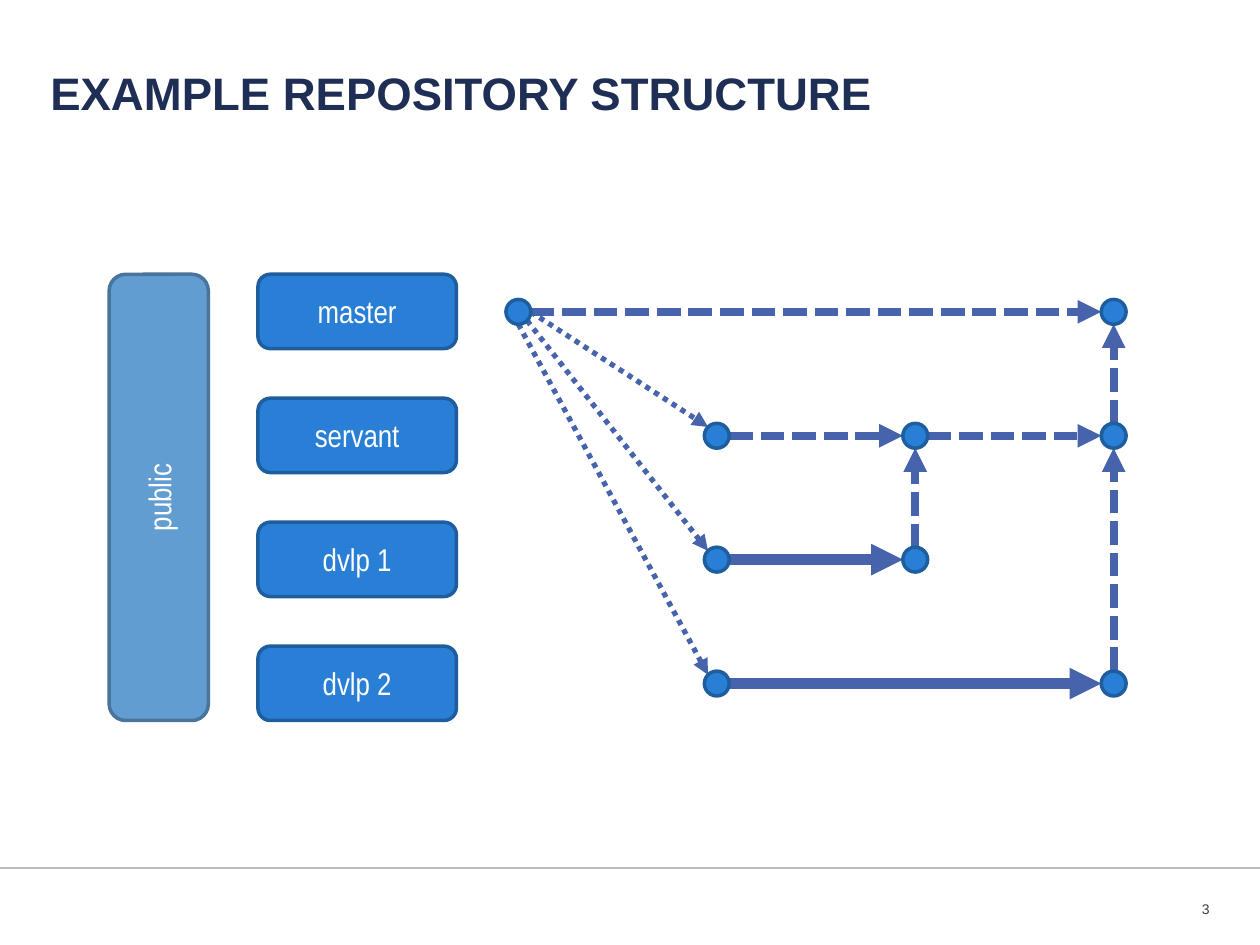
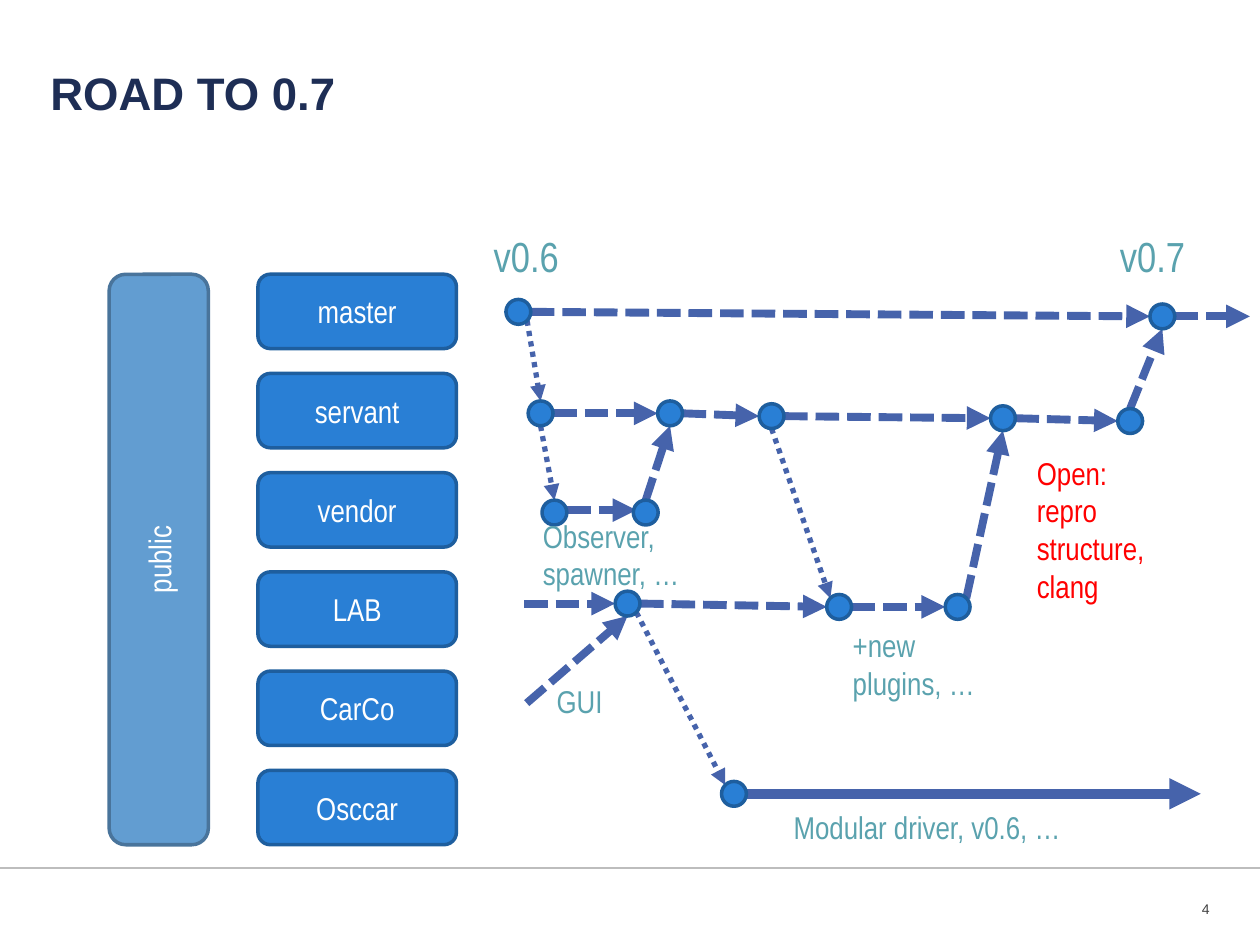
from collections import namedtuple

from lxml.etree import SubElement
from pptx import Presentation
from pptx.dml.color import RGBColor
from pptx.enum.dml import MSO_LINE as Dash
from pptx.enum.shapes import MSO_CONNECTOR as Link, MSO_SHAPE as Preset
from pptx.enum.text import MSO_ANCHOR as Anchor, PP_ALIGN as Align
from pptx.oxml.ns import qn
from pptx.util import Pt

Box = namedtuple("Box", "left top width height")

NAVY = RGBColor(0x1E, 0x2E, 0x55)
GREY = RGBColor(0x40, 0x40, 0x40)
BLACK = RGBColor(0, 0, 0)
WHITE = RGBColor(0xFF, 0xFF, 0xFF)
RED = RGBColor(0xFF, 0, 0)
TEAL = RGBColor(0x5A, 0xA2, 0xAE)
BRANCH_FILL = RGBColor(0x29, 0x7F, 0xD5)
BRANCH_EDGE = RGBColor(0x1E, 0x5E, 0x9E)
PUBLIC_FILL = RGBColor(0x62, 0x9D, 0xD1)
PUBLIC_EDGE = RGBColor(0x49, 0x74, 0x9B)
ARROW = RGBColor(0x46, 0x63, 0xAB)

TITLE_FONT = {"name": "Arial", "size": Pt(26), "bold": True}
NUMBER_FONT = {"name": "Arial", "size": Pt(8)}
BODY_FONT = {"name": "Arial Narrow", "size": Pt(18)}
VERSION_FONT = {"name": "Arial Narrow", "size": Pt(24)}
NO_INSETS = dict.fromkeys(("margin_left", "margin_top", "margin_right", "margin_bottom"), 0)
MIDDLE = {"word_wrap": True, "vertical_anchor": Anchor.MIDDLE}

TITLE_BOX = Box(28.8, 27.4, 551.5, 55.4)
NUMBER_BOX = Box(625, 506.2, 66.2, 25.9)
FOOTER_Y = 496
PUBLIC_LEFT, PUBLIC_WIDTH = 62.4, 56.7
BRANCH_LEFT, BRANCH_WIDTH, BRANCH_HEIGHT = 147.4, 113.4, 42.5
BRANCH_TOP = 156.7
GRAPH_LEFT, GRAPH_TOP = 296.2, 178.2

RADIUS, DIAGONAL = 7.1, 5
SIDES = {
    "top": (0, -RADIUS), "bottom": (0, RADIUS),
    "left": (-RADIUS, 0), "right": (RADIUS, 0),
    "nw": (-DIAGONAL, -DIAGONAL), "ne": (DIAGONAL, -DIAGONAL),
    "se": (DIAGONAL, DIAGONAL),
}
MERGE = {"width": Pt(4.5), "dash_style": Dash.SQUARE_DOT}
FORK = {"width": Pt(3), "dash_style": Dash.ROUND_DOT}
WORK = {"width": Pt(6)}


def apply(target, values):
    """Set every attribute listed in values on target."""
    for name, value in values.items():
        setattr(target, name, value)


def write(frame, text, font, colour, layout, paragraph_format):
    """Fill a text frame, one paragraph per line of text."""
    apply(frame, layout)
    frame.text = text
    for paragraph in frame.paragraphs:
        apply(paragraph, paragraph_format)
        apply(paragraph.font, font)
        paragraph.font.color.rgb = colour


def add_text(slide, box, text, font, colour, layout, paragraph_format):
    """Add a text box."""
    area = slide.shapes.add_textbox(*map(Pt, box))
    write(area.text_frame, text, font, colour, layout, paragraph_format)


def add_block(slide, preset, box, fill, edge):
    """Add an outlined preset shape."""
    block = slide.shapes.add_shape(preset, *map(Pt, box))
    block.shadow.inherit = False
    block.fill.solid()
    block.fill.fore_color.rgb = fill
    block.line.color.rgb = edge
    block.line.width = Pt(2)
    return block


def add_line(slide, start, end, colour, stroke):
    """Add a straight line and return its outline element."""
    line = slide.shapes.add_connector(Link.STRAIGHT, *map(Pt, (*start, *end)))
    line.line.color.rgb = colour
    apply(line.line, stroke)
    properties = line._element.spPr
    SubElement(properties, qn("a:effectLst"))
    return properties.find(qn("a:ln"))


def add_frame(deck, title, number):
    """Add a blank slide with its title, footer rule and number."""
    slide = deck.slides.add_slide(deck.slide_layouts[6])
    rule = add_line(slide, (0, FOOTER_Y), (720, FOOTER_Y), BLACK, {"width": Pt(1)})
    colour = rule.find(".//" + qn("a:srgbClr"))
    SubElement(colour, qn("a:alpha")).set("val", "25000")
    add_text(slide, TITLE_BOX, title, TITLE_FONT, NAVY, MIDDLE | NO_INSETS,
             {"line_spacing": Pt(27)})
    add_text(slide, NUMBER_BOX, number, NUMBER_FONT, GREY, MIDDLE | NO_INSETS,
             {"alignment": Align.RIGHT})
    return slide


def add_public(slide, box):
    """Draw the upright public bar that fills the box."""
    left = box.left + (box.width - box.height) / 2
    top = box.top + (box.height - box.width) / 2
    bar = add_block(slide, Preset.ROUNDED_RECTANGLE,
                    Box(left, top, box.height, box.width), PUBLIC_FILL, PUBLIC_EDGE)
    bar.rotation = 270
    write(bar.text_frame, "public", BODY_FONT, WHITE, MIDDLE, {"alignment": Align.CENTER})


def add_branches(slide, box, names):
    """Spread the branch names evenly down the box."""
    pitch = (box.height - BRANCH_HEIGHT) / (len(names) - 1)
    for row, name in enumerate(names):
        place = Box(box.left, box.top + row * pitch, box.width, BRANCH_HEIGHT)
        branch = add_block(slide, Preset.ROUNDED_RECTANGLE, place, BRANCH_FILL, BRANCH_EDGE)
        write(branch.text_frame, name, BODY_FONT, WHITE, MIDDLE, {"alignment": Align.CENTER})


def add_repository(slide, height, names):
    """Draw the public bar and the branches beside it."""
    add_public(slide, Box(PUBLIC_LEFT, BRANCH_TOP, PUBLIC_WIDTH, height))
    add_branches(slide, Box(BRANCH_LEFT, BRANCH_TOP, BRANCH_WIDTH, height), names)


def add_graph(slide, origin, commits, links):
    """Draw commits and the arrows between them, relative to origin."""
    def locate(end):
        x, y = end
        if x in commits:
            (x, y), (dx, dy) = commits[x], SIDES[y]
            x, y = x + dx, y + dy
        return origin[0] + x, origin[1] + y

    for stroke, start, end in links:
        outline = add_line(slide, locate(start), locate(end), ARROW, stroke)
        SubElement(outline, qn("a:tailEnd")).set("type", "triangle")
    for x, y in commits.values():
        box = Box(origin[0] + x - RADIUS, origin[1] + y - RADIUS, 2 * RADIUS, 2 * RADIUS)
        add_block(slide, Preset.OVAL, box, BRANCH_FILL, BRANCH_EDGE)


def add_notes(slide, origin, notes):
    """Write the remarks around the graph, relative to origin."""
    for text, box, font, colour in notes:
        place = Box(origin[0] + box[0], origin[1] + box[1], *box[2:])
        add_text(slide, place, text, font, colour, {"word_wrap": True}, {})


def build_structure(deck):
    """Build the slide with the example structure."""
    slide = add_frame(deck, "EXAMPLE REPOSITORY STRUCTURE", "3")
    add_repository(slide, 255, ("master", "servant", "dvlp 1", "dvlp 2"))
    cells = {
        "start": (0, 0), "release": (3, 0),
        "servant": (1, 1), "joined": (2, 1), "ready": (3, 1),
        "dvlp1": (1, 2), "done1": (2, 2),
        "dvlp2": (1, 3), "done2": (3, 3),
    }
    commits = {name: (column * 113.4, row * 70.8) for name, (column, row) in cells.items()}
    links = (
        (MERGE, ("start", "right"), ("release", "left")),
        (FORK, ("start", "right"), ("servant", "nw")),
        (FORK, ("start", "se"), ("dvlp1", "nw")),
        (FORK, ("start", "bottom"), ("dvlp2", "nw")),
        (MERGE, ("servant", "right"), ("joined", "left")),
        (MERGE, ("joined", "right"), ("ready", "left")),
        (WORK, ("dvlp1", "right"), ("done1", "left")),
        (WORK, ("dvlp2", "right"), ("done2", "left")),
        (MERGE, ("done1", "top"), ("joined", "bottom")),
        (MERGE, ("done2", "top"), ("ready", "bottom")),
        (MERGE, ("ready", "top"), ("release", "bottom")),
    )
    add_graph(slide, (GRAPH_LEFT, GRAPH_TOP), commits, links)


def build_road(deck):
    """Build the slide with the road to the next version."""
    slide = add_frame(deck, "ROAD TO 0.7", "4")
    add_repository(slide, 326, ("master", "servant", "vendor", "LAB", "CarCo", "Osccar"))
    commits = {
        "v0.6": (0, 0), "v0.7": (368, 2.6),
        "servant": (12.7, 58), "observed": (86.7, 58), "shared": (144.7, 59.6),
        "plugged": (276.9, 60.8), "ready": (349.6, 62.4),
        "observer": (20.6, 114.7), "spawner": (72.8, 114.7),
        "gui": (62.4, 166.7), "plugins": (183.3, 168.6), "tested": (251, 168.6),
        "driver": (123.2, 275.4),
    }
    links = (
        (MERGE, ("v0.6", "right"), ("v0.7", "left")),
        (MERGE, ("v0.7", "right"), (418, 2.6)),
        (FORK, ("v0.6", "se"), ("servant", "top")),
        (MERGE, ("servant", "right"), ("observed", "left")),
        (MERGE, ("observed", "right"), ("shared", "left")),
        (MERGE, ("shared", "right"), ("plugged", "left")),
        (MERGE, ("plugged", "right"), ("ready", "left")),
        (MERGE, ("ready", "top"), ("v0.7", "bottom")),
        (FORK, ("servant", "bottom"), ("observer", "top")),
        (MERGE, (27.8, 113.3), (67.4, 113.3)),
        (MERGE, ("spawner", "top"), ("observed", "bottom")),
        (MERGE, (3.3, 166.7), ("gui", "left")),
        (MERGE, (4.8, 223.6), ("gui", "bottom")),
        (MERGE, ("gui", "right"), ("plugins", "left")),
        (FORK, ("shared", "bottom"), ("plugins", "nw")),
        (MERGE, ("plugins", "right"), ("tested", "left")),
        (MERGE, ("tested", "ne"), ("plugged", "bottom")),
        (FORK, ("gui", "se"), ("driver", "nw")),
        (WORK, ("driver", "right"), (390, 275.4)),
    )
    notes = (
        ("v0.6", (-21.2, -50, 70.6, 36), VERSION_FONT, TEAL),
        ("v0.7", (336.7, -50, 87, 36), VERSION_FONT, TEAL),
        ("Observer, spawner, …", (6.9, 113.4, 118.8, 51), BODY_FONT, TEAL),
        ("+new plugins, …", (184, 176, 93, 51), BODY_FONT, TEAL),
        ("GUI", (14.8, 207.7, 52.6, 29), BODY_FONT, TEAL),
        ("Modular driver, v0.6, …", (150.2, 279.7, 193, 29), BODY_FONT, TEAL),
        ("Open:\nrepro structure, clang", (289.2, 77.4, 84.2, 94.3), BODY_FONT, RED),
    )
    add_graph(slide, (GRAPH_LEFT, GRAPH_TOP), commits, links)
    add_notes(slide, (GRAPH_LEFT, GRAPH_TOP), notes)


def main():
    """Build both slides and save them."""
    deck = Presentation()
    apply(deck, {"slide_width": Pt(720), "slide_height": Pt(540)})
    build_structure(deck)
    build_road(deck)
    deck.save("out.pptx")


if __name__ == "__main__":
    main()
